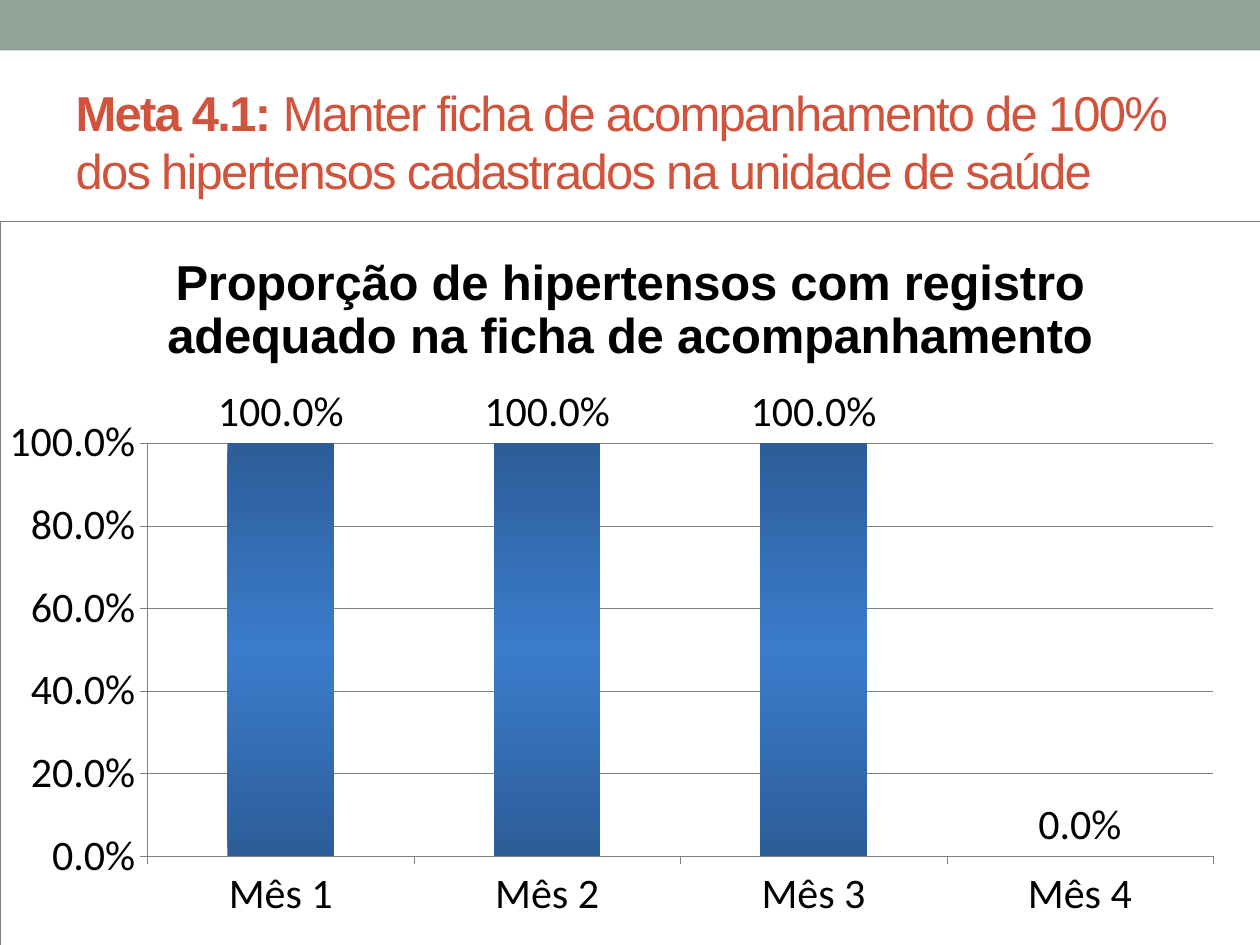
from dataclasses import dataclass

import pptx
import pptx.chart.data
import pptx.dml.color
import pptx.enum.chart
import pptx.enum.shapes
import pptx.enum.text
import pptx.oxml
import pptx.oxml.ns
import pptx.util
from pptx.util import Cm


@dataclass(frozen=True)
class Theme:
    band: str = "93A299"
    title: str = "D2533C"
    text: str = "000000"
    paper: str = "FFFFFF"
    line: str = "808080"
    bar_edge: str = "2C5D98"
    bar_middle: str = "3A7CCB"
    heading_font: str = "Arial"
    chart_font: str = "Calibri"
    heading_size: float = 28
    label_size: float = 24
    line_width: float = 0.25


theme = Theme()
rgb = pptx.dml.color.RGBColor.from_string
qn = pptx.oxml.ns.qn
ns = pptx.oxml.ns.nsdecls("c", "a")


def add_run(p, text, color=theme.text, bold=False, spacing=None):
    r = p.add_run()
    r.text = text
    r.font.name = theme.heading_font
    r.font.size = pptx.util.Pt(theme.heading_size)
    r.font.bold = bold
    r.font.color.rgb = rgb(color)
    if spacing is not None:
        r._r.get_or_add_rPr().set("spc", str(int(spacing * 100)))


def style_line(line):
    line.color.rgb = rgb(theme.line)
    line.width = pptx.util.Pt(theme.line_width)


prs = pptx.Presentation()
prs.slide_width, prs.slide_height = Cm(25.4), Cm(19.05)
s = prs.slides.add_slide(prs.slide_layouts[5])

band = s.shapes.add_shape(
    pptx.enum.shapes.MSO_SHAPE.RECTANGLE, 0, 0, prs.slide_width, Cm(1.02))
band.shadow.inherit = False
band.fill.solid()
band.fill.fore_color.rgb = rgb(theme.band)
band.line.fill.background()

title = s.shapes.title
title.left, title.top, title.width, title.height = Cm(1.27), Cm(1.47), Cm(22.86), Cm(2.74)
tf = title.text_frame
tf.word_wrap = True
tf.auto_size = pptx.enum.text.MSO_AUTO_SIZE.NONE
tf.vertical_anchor = pptx.enum.text.MSO_ANCHOR.MIDDLE
p = tf.paragraphs[0]
p.alignment = pptx.enum.text.PP_ALIGN.LEFT
add_run(p, "Meta 4.1:", color=theme.title, bold=True, spacing=-1)
add_run(p, " Manter ficha de acompanhamento de 100% dos hipertensos cadastrados na unidade de saúde",
        color=theme.title, spacing=-1)

chart_title = "Proporção de hipertensos com registro adequado na ficha de acompanhamento"
data = pptx.chart.data.CategoryChartData(number_format="0.0%")
data.categories = [f"Mês {month}" for month in range(1, 5)]
data.add_series(chart_title, (1, 1, 1, 0))
chart_top = Cm(4.45)
chart = s.shapes.add_chart(
    pptx.enum.chart.XL_CHART_TYPE.COLUMN_CLUSTERED, 0, chart_top,
    prs.slide_width, prs.slide_height - chart_top, data).chart
chart.has_legend = False
chart.font.name = theme.chart_font
chart.font.size = pptx.util.Pt(theme.label_size)
chart.font.color.rgb = rgb(theme.text)
chart.has_title = True
chart.chart_title.include_in_layout = False
add_run(chart.chart_title.text_frame.paragraphs[0], chart_title, bold=True)

for axis in (chart.category_axis, chart.value_axis):
    axis.major_tick_mark = pptx.enum.chart.XL_TICK_MARK.OUTSIDE
    axis.minor_tick_mark = pptx.enum.chart.XL_TICK_MARK.NONE
    style_line(axis.format.line)
value_axis = chart.value_axis
value_axis.minimum_scale, value_axis.maximum_scale, value_axis.major_unit = 0, 1, 0.2
value_axis.has_major_gridlines = True
style_line(value_axis.major_gridlines.format.line)
value_axis.tick_labels.number_format = "0.0%"
value_axis.tick_labels.number_format_is_linked = False

plot = chart.plots[0]
plot.vary_by_categories = False
plot.gap_width = 150
plot.has_data_labels = True
labels = plot.data_labels
labels.show_value = True
labels.number_format = "0.0%"
labels.number_format_is_linked = False
labels.position = pptx.enum.chart.XL_LABEL_POSITION.OUTSIDE_END
labels.font.name = theme.chart_font
labels.font.size = pptx.util.Pt(theme.label_size)
labels.font.color.rgb = rgb(theme.text)

fill = plot.series[0].format.fill
fill.gradient()
fill.gradient_angle = 90
stops = "".join(
    f'<a:gs pos="{pos * 1000}"><a:srgbClr val="{color}"/></a:gs>'
    for pos, color in ((0, theme.bar_edge), (50, theme.bar_middle), (100, theme.bar_edge)))
old_stops = fill.gradient_stops[0]._gs.getparent()
old_stops.getparent().replace(
    old_stops, pptx.oxml.parse_xml(f"<a:gsLst {ns}>{stops}</a:gsLst>"))

paper = f'<a:solidFill><a:srgbClr val="{theme.paper}"/></a:solidFill>'
border = (f'<a:ln w="{pptx.util.Pt(theme.line_width)}"><a:solidFill>'
          f'<a:srgbClr val="{theme.line}"/></a:solidFill></a:ln>')
plot_area = chart._chartSpace.chart.plotArea
for layout in plot_area.findall(qn("c:layout")):
    plot_area.remove(layout)
frame = "".join(
    f'<c:{name} val="{value}"/>' for name, value in (
        ("layoutTarget", "inner"), ("xMode", "edge"), ("yMode", "edge"),
        ("x", 0.117), ("y", 0.307), ("w", 0.846), ("h", 0.571)))
plot_area.insert(0, pptx.oxml.parse_xml(
    f"<c:layout {ns}><c:manualLayout>{frame}</c:manualLayout></c:layout>"))
plot_area.append(pptx.oxml.parse_xml(f"<c:spPr {ns}>{paper}</c:spPr>"))
chart._chartSpace.chart.addnext(pptx.oxml.parse_xml(f"<c:spPr {ns}>{paper}{border}</c:spPr>"))

prs.save("out.pptx")
